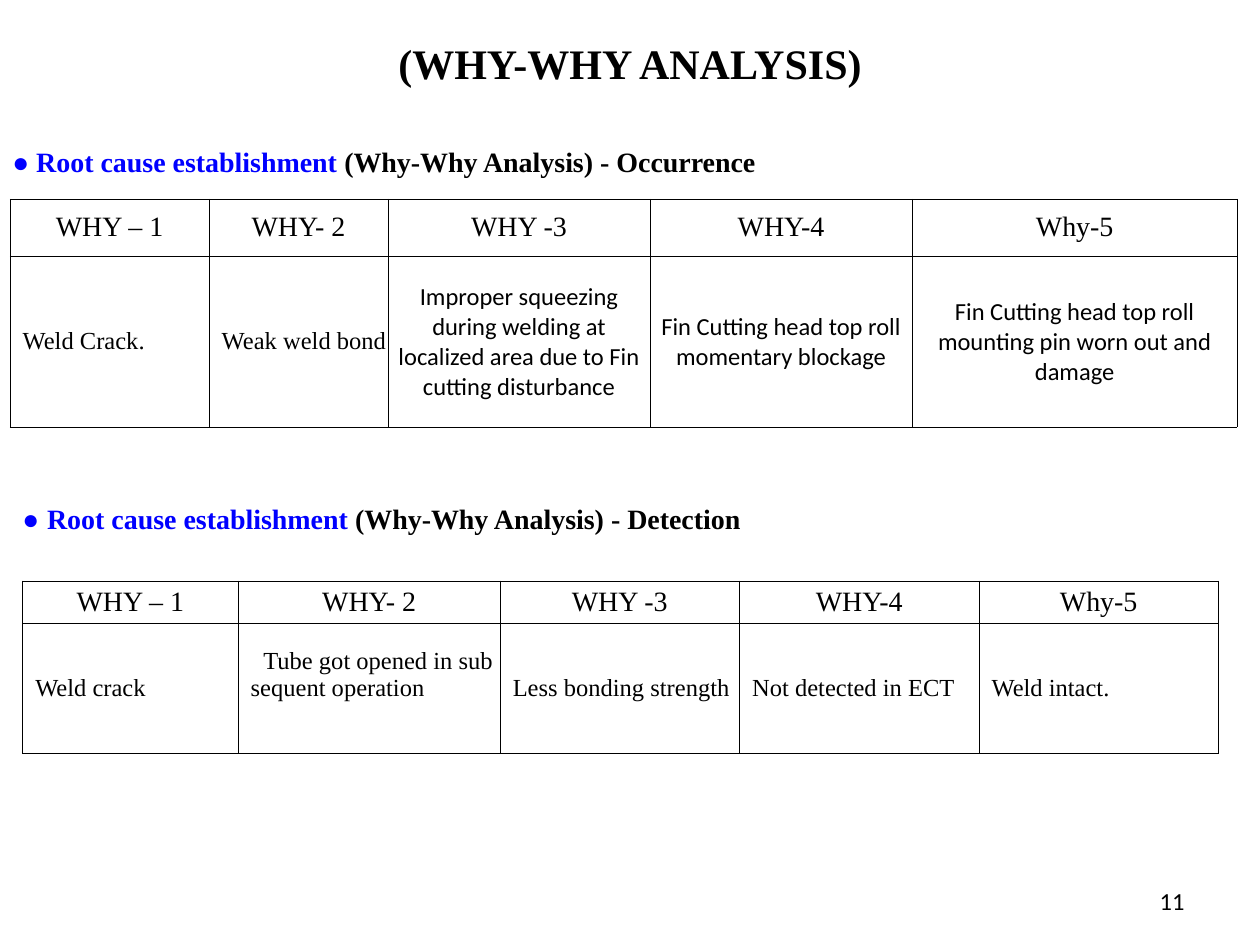
"""Build the why-why analysis slide with its two root cause tables."""
from lxml.etree import SubElement
from pptx import Presentation
from pptx.dml.color import RGBColor
from pptx.enum.text import MSO_ANCHOR, PP_ALIGN
from pptx.oxml.ns import qn
from pptx.util import Inches, Pt

BLACK = RGBColor(0, 0, 0)
BLUE = RGBColor(0, 0, 255)
WHITE = RGBColor(255, 255, 255)
SERIF, SANS, ARIAL = "Times New Roman", "Calibri", "Arial"

TITLE = "(WHY-WHY ANALYSIS)"
PAGE = "11"
LABEL = "Root cause establishment "
HEADS = ["WHY – 1", "WHY- 2", "WHY -3", "WHY-4", "Why-5"]
PARTS = [
    {
        "name": "Occurrence", "dot": SERIF, "label": (0, 1.1),
        "place": (0.08, 1.58),
        "cols": [1.58, 1.42, 2.08, 2.08, 2.58], "rows": [0.45, 1.36],
        "texts": [
            "Weld Crack.",
            "Weak weld bond",
            "Improper squeezing during welding at localized area due to Fin "
            "cutting disturbance",
            "Fin Cutting head top roll momentary blockage",
            "Fin Cutting head top roll mounting pin worn out and damage",
        ],
        "centred": {2, 3, 4}, "raised": set(),
    },
    {
        "name": "Detection", "dot": ARIAL, "label": (0.08, 3.93),
        "place": (0.18, 4.61),
        "cols": [1.71, 2.08, 1.9, 1.9, 1.9], "rows": [0.34, 1.03],
        "texts": [
            "Weld crack",
            "Tube got opened in sub sequent operation",
            "Less bonding strength",
            "Not detected in ECT",
            "Weld intact.",
        ],
        "centred": set(), "raised": {1},
    },
]


def write(para, text, size=16, font=SERIF, color=BLACK, bold=False, align=None):
    """Add one formatted run to a paragraph."""
    run = para.add_run()
    run.text = text
    run.font.size = Pt(size)
    run.font.name = font
    run.font.bold = bold
    run.font.color.rgb = color
    if align is not None:
        para.alignment = align


def add_box(slide, left, top, width, height, anchor=MSO_ANCHOR.TOP):
    """Add a wrapping text box and return its first paragraph."""
    frame = slide.shapes.add_textbox(
        Inches(left), Inches(top), Inches(width), Inches(height)).text_frame
    frame.word_wrap = True
    frame.vertical_anchor = anchor
    return frame.paragraphs[0]


def style(cell, left=0, top=0, right=0, bottom=0):
    """Give a cell its borders, white fill and margins."""
    props = cell._tc.get_or_add_tcPr()
    for side in ("lnL", "lnR", "lnT", "lnB"):
        line = SubElement(props, qn(f"a:{side}"), w=str(Pt(0.25)))
        fill = SubElement(line, qn("a:solidFill"))
        SubElement(fill, qn("a:srgbClr"), val=str(BLACK))
    cell.fill.solid()
    cell.fill.fore_color.rgb = WHITE
    cell.vertical_anchor = MSO_ANCHOR.MIDDLE
    cell.margin_left, cell.margin_top = Inches(left), Inches(top)
    cell.margin_right, cell.margin_bottom = Inches(right), Inches(bottom)


def add_part(slide, part):
    """Add a heading and the table under it."""
    para = add_box(slide, *part["label"], 7.59, 0.32)
    write(para, "● ", font=part["dot"], color=BLUE, bold=True)
    write(para, LABEL, color=BLUE, bold=True)
    write(para, f"(Why-Why Analysis) - {part['name']}", bold=True)

    cols, rows = part["cols"], part["rows"]
    sizes = [*part["place"], sum(cols), sum(rows)]
    table = slide.shapes.add_table(
        len(rows), len(cols), *map(Inches, sizes)).table
    table.first_row = table.horz_banding = False
    for row, height in zip(table.rows, rows):
        row.height = Inches(height)
    for i, (width, head, text) in enumerate(zip(cols, HEADS, part["texts"])):
        table.columns[i].width = Inches(width)
        top, body = table.cell(0, i), table.cell(1, i)
        style(top)
        write(top.text_frame.paragraphs[0], head, align=PP_ALIGN.CENTER)
        para = body.text_frame.paragraphs[0]
        if i in part["centred"]:
            style(body, 0.01, 0.01, 0.01)
            write(para, text, size=14, font=SANS, align=PP_ALIGN.CENTER)
            continue
        raised = i in part["raised"]
        style(body, left=0.1, bottom=0.22 if raised else 0)
        if raised:
            para._p.get_or_add_pPr().set("indent", str(Inches(0.1)))
        write(para, text, size=14)


def main():
    """Build and save the slide."""
    deck = Presentation()
    deck.slide_width, deck.slide_height = Inches(10), Inches(7.5)
    slide = deck.slides.add_slide(deck.slide_layouts[6])
    write(add_box(slide, 0, 0.25, 10, 0.7), TITLE,
          size=24, bold=True, align=PP_ALIGN.CENTER)
    for part in PARTS:
        add_part(slide, part)
    write(add_box(slide, 7.17, 6.95, 2.33, 0.4, MSO_ANCHOR.MIDDLE), PAGE,
          size=14, font=SANS, align=PP_ALIGN.RIGHT)
    deck.save("out.pptx")


if __name__ == "__main__":
    main()
